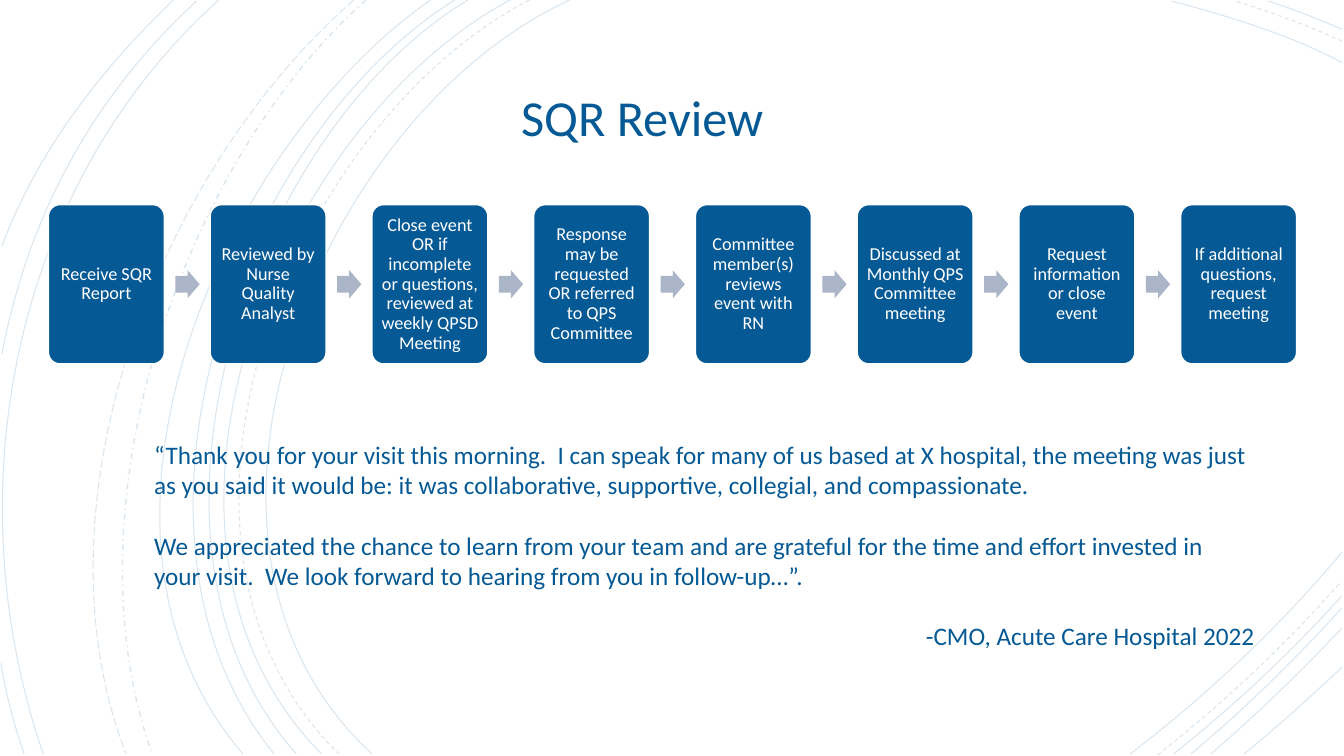
"""Build the SQR Review slide with its process flow and quote."""
from lxml.etree import SubElement
from pptx import Presentation
from pptx.dml.color import RGBColor
from pptx.enum.dml import MSO_LINE
from pptx.enum.shapes import MSO_SHAPE
from pptx.enum.text import MSO_ANCHOR, PP_ALIGN
from pptx.oxml.ns import qn
from pptx.util import Inches, Pt

BLUE = RGBColor(0x05, 0x59, 0x94)
GREY = RGBColor(0xAB, 0xB5, 0xC8)
WHITE = RGBColor(0xFF, 0xFF, 0xFF)
FONT = "Calibri"

SOLID = [
    (5.65, 0, 3.15, 1.15, 1.43, 5.4, 3.69, 7.48),
    (13.31, 0.62, 12.78, 0.34, 12.18, 0.16, 11.62, 0.01),
    (11.21, 7.48, 11.97, 6.9, 12.69, 6.22, 13.31, 5.48),
    (5.06, 0, 2.7, 1.27, 1.1, 5.37, 3.19, 7.48),
    (13.31, 0.29, 13.07, 0.19, 12.83, 0.09, 12.58, 0.01),
    (11.64, 7.48, 12.23, 7.01, 12.8, 6.48, 13.31, 5.91),
    (4.64, 0, 2.44, 1.33, 1.1, 5.41, 2.94, 7.48),
    (11.81, 7.48, 12.34, 7.04, 12.84, 6.55, 13.31, 6.03),
    (4.51, 0, 2.31, 1.38, 0.97, 5.33, 2.72, 7.48),
    (12.01, 7.48, 12.46, 7.09, 12.9, 6.67, 13.31, 6.23),
    (4.27, 0, 2.17, 1.47, 0.53, 5.29, 2.41, 7.48),
    (12.34, 7.48, 12.67, 7.21, 12.99, 6.92, 13.31, 6.62),
    (2.17, 0, 0.11, 1.85, -0.46, 4.9, 0.43, 7.48),
    (1.95, 0.01, 0.92, 0.96, 0.28, 2.14, 0.02, 3.51),
    (0.01, 6.58, 0.06, 6.89, 0.14, 7.19, 0.24, 7.48),
    (1.72, 0, 1, 0.69, 0.37, 1.5, 0.02, 2.44),
]
DASHED = [
    (5.25, 0, 2.85, 1.25, 1.23, 5.37, 3.36, 7.48),
    (13.31, 0.41, 12.97, 0.25, 12.6, 0.12, 12.25, 0.01),
    (11.48, 7.49, 12.13, 6.98, 12.75, 6.4, 13.3, 5.77),
]
MIXED = [(3.63, 0, 1.76, 1.66, 0.65, 5.09, 1.51, 7.48)]
LONG = [(3.51, 0, 1.57, 1.69, 0.29, 4.99, 1.25, 7.48)]
ARCS = [
    (SOLID, MSO_LINE.SOLID, 0.75),
    (DASHED, MSO_LINE.DASH, 0.75),
    (MIXED, MSO_LINE.DASH_DOT, 1),
    (LONG, MSO_LINE.LONG_DASH, 0.75),
]

STEPS = [
    "Receive SQR Report",
    "Reviewed by Nurse Quality Analyst",
    "Close event OR if incomplete or questions, reviewed at weekly QPSD Meeting",
    "Response may be requested OR referred to QPS Committee",
    "Committee member(s) reviews event with RN",
    "Discussed at Monthly QPS Committee meeting",
    "Request information or close event",
    "If additional questions, request meeting",
]
LEFT, LAST = 0.48, 11.71
PITCH = (LAST - LEFT) / (len(STEPS) - 1)

QUOTE = [
    "“Thank you for your visit this morning.  I can speak for many of us based "
    "at X hospital, the meeting was just as you said it would be: it was "
    "collaborative, supportive, collegial, and compassionate.",
    "We appreciated the chance to learn from your team and are grateful for the "
    "time and effort invested in your visit.  We look forward to hearing from "
    "you in follow-up…”.",
    "-CMO, Acute Care Hospital 2022",
]


def bend(curve):
    legs = list(curve._element.iter(qn("a:lnTo")))
    route = legs[0].getparent()
    cubic = SubElement(route, qn("a:cubicBezTo"))
    for leg in legs:
        cubic.append(leg[0])
        route.remove(leg)


def add_arc(shapes, arc, dash, width):
    points = list(zip(map(Inches, arc[::2]), map(Inches, arc[1::2])))
    pen = shapes.build_freeform(*points[0])
    pen.add_line_segments(points[1:], close=False)
    curve = pen.convert_to_shape()
    bend(curve)
    curve.shadow.inherit = False
    curve.fill.background()
    line = curve.line
    line.color.rgb = BLUE
    line.width = Pt(width)
    line.dash_style = dash
    tint = line._ln.find(".//" + qn("a:srgbClr"))
    SubElement(tint, qn("a:alpha")).set("val", "15000")


def style(para, size, color, align):
    para.font.name = FONT
    para.font.size = Pt(size)
    para.font.color.rgb = color
    para.alignment = align


def place(shape, left, top, width, height):
    shape.left, shape.top = Inches(left), Inches(top)
    shape.width, shape.height = Inches(width), Inches(height)


def set_title(shapes):
    title = shapes.title
    place(title, 1.38, 0.62, 9.98, 1.15)
    title.text_frame.text = "SQR Review"
    title.text_frame.vertical_anchor = MSO_ANCHOR.MIDDLE
    para = title.text_frame.paragraphs[0]
    style(para, 36, BLUE, PP_ALIGN.CENTER)
    para.line_spacing = 0.9
    shapes._spTree.append(title._element)


def add_block(shapes, kind, box, fill):
    block = shapes.add_shape(kind, *map(Inches, box))
    block.shadow.inherit = False
    block.fill.solid()
    block.fill.fore_color.rgb = fill
    block.line.fill.background()
    return block


def add_step(shapes, left, text):
    step = add_block(shapes, MSO_SHAPE.ROUNDED_RECTANGLE,
                     (left, 2.03, 1.15, 1.58), BLUE)
    step.adjustments[0] = 0.1
    step.line.color.rgb = WHITE
    step.line.width = Pt(1)
    frame = step.text_frame
    frame.word_wrap = True
    frame.vertical_anchor = MSO_ANCHOR.MIDDLE
    frame.margin_left = frame.margin_right = Inches(0.05)
    frame.margin_top = frame.margin_bottom = Inches(0.05)
    frame.text = text
    para = frame.paragraphs[0]
    style(para, 13, WHITE, PP_ALIGN.CENTER)
    para.line_spacing = 0.9


def add_arrow(shapes, left):
    arrow = add_block(shapes, MSO_SHAPE.RIGHT_ARROW,
                      (left, 2.68, 0.24, 0.28), GREY)
    arrow.adjustments[0] = 0.6
    arrow.adjustments[1] = 0.5


def add_quote(shapes):
    box = shapes.add_textbox(*map(Inches, (1.43, 4.31, 11.11, 2.22)))
    frame = box.text_frame
    frame.word_wrap = True
    frame.text = "\n".join(QUOTE)
    for para in frame.paragraphs:
        style(para, 18, BLUE, PP_ALIGN.LEFT)
    for para in frame.paragraphs[1:]:
        para.space_before = Pt(21.5)
    frame.paragraphs[-1].alignment = PP_ALIGN.RIGHT


def main():
    deck = Presentation()
    deck.slide_width, deck.slide_height = Inches(13.33), Inches(7.5)
    shapes = deck.slides.add_slide(deck.slide_layouts[5]).shapes
    for arcs, dash, width in ARCS:
        for arc in arcs:
            add_arc(shapes, arc, dash, width)
    set_title(shapes)
    for i, text in enumerate(STEPS):
        left = LEFT + i * PITCH
        add_step(shapes, left, text)
        if i < len(STEPS) - 1:
            add_arrow(shapes, left + 1.26)
    add_quote(shapes)
    deck.save("out.pptx")


if __name__ == "__main__":
    main()
